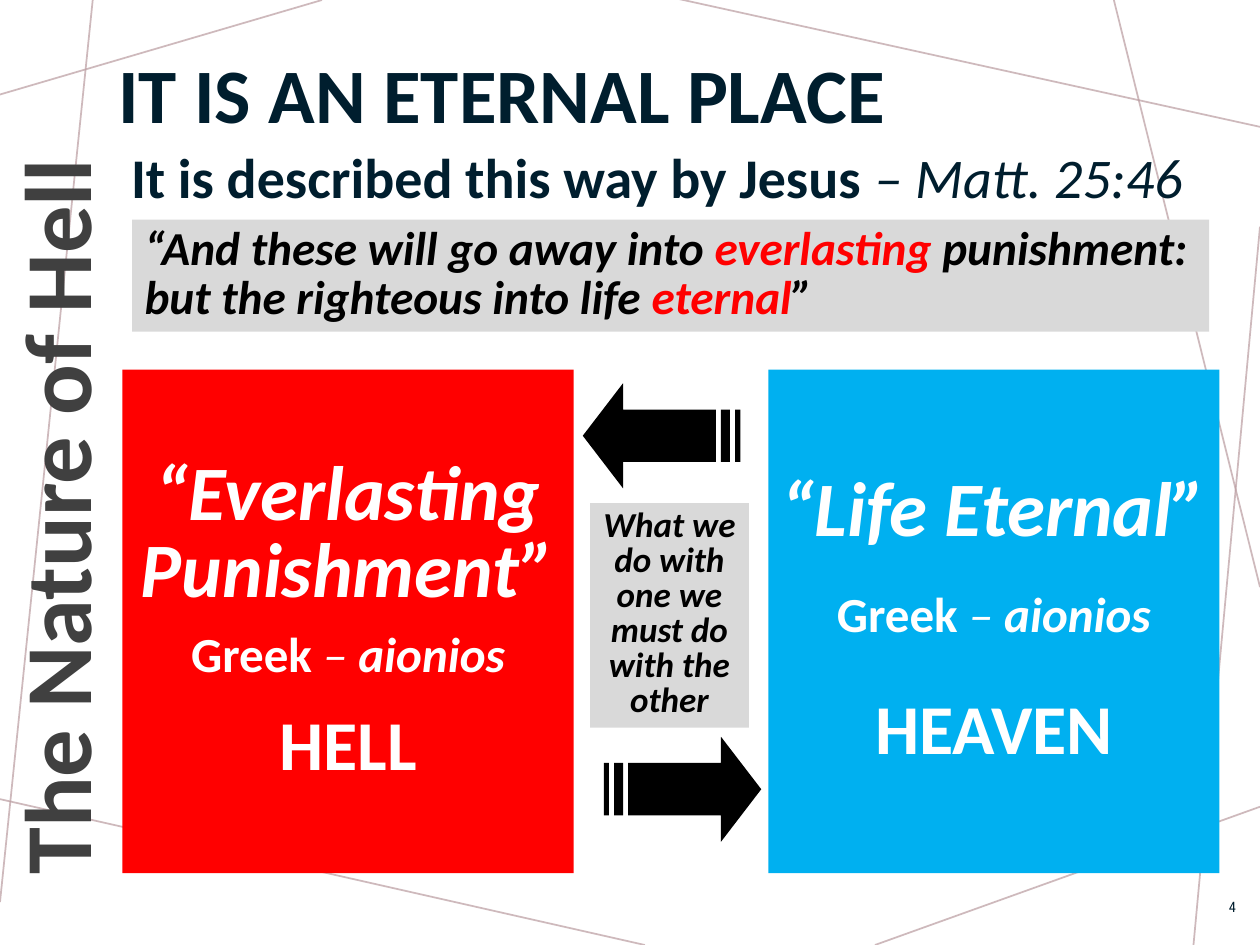
from lxml import etree
from pptx import Presentation
from pptx.dml.color import RGBColor
from pptx.enum import shapes as kinds, text as txt
from pptx.oxml import ns
from pptx.util import Pt

NAVY = RGBColor(0x00, 0x1E, 0x2E)
MAUVE = RGBColor(0xBA, 0x9C, 0xA0)
BLACK = RGBColor(0, 0, 0)
WHITE = RGBColor(0xFF, 0xFF, 0xFF)
RED = RGBColor(0xFF, 0, 0)
BLUE = RGBColor(0x00, 0xB0, 0xF0)
GREY = RGBColor(0xD9, 0xD9, 0xD9)
DARK = RGBColor(0x40, 0x40, 0x40)
MID, LEFT, RIGHT = txt.PP_ALIGN.CENTER, txt.PP_ALIGN.LEFT, txt.PP_ALIGN.RIGHT

# Background lines: start x, y, end x, y
RAYS = [
    (184, 0, 0, 54), (53, 0, 0, 515.5), (368.5, 540, -3, 456),
    (720, 461, 500, 540), (720, 129.5, 682, 540),
    (720, 335.5, 636.5, 0), (720, 72.5, 386, -1),
]

# A paragraph: runs, size, line spacing, space before.
# A run: text, then the font settings that differ from bold upright.
SLANT = {"italic": True}
THIN = {"italic": True, "bold": False}
HOT = {"italic": True, "color": RED}
GREEK = [("Greek ", {}), ("– ", THIN), ("aionios", SLANT)]

TITLE = [([("IT IS AN ETERNAL PLACE", {})], 44, 0.9, 0)]
LEAD = [([("It is described this way by Jesus ", {}),
          ("– Matt. 25:46", THIN)], 32, Pt(32), 0)]
SIDE = [([("The Nature of Hell", {})], 54, 1.0, 0)]
QUOTE = [([("“And these will go away into ", SLANT), ("everlasting", HOT),
           (" punishment: but the righteous into life ", SLANT),
           ("eternal", HOT), ("”", SLANT)], 27, Pt(28), 0)]
HELL = [
    ([("“Everlasting", SLANT)], 44, Pt(44), 0),
    ([("Punishment”", SLANT)], 44, Pt(44), 0),
    (GREEK, 28, Pt(28), 12),
    ([("HELL", {})], 40, Pt(40), 18),
]
HEAVEN = [
    ([("“Life Eternal”", SLANT)], 44, Pt(44), 0),
    (GREEK, 28, Pt(28), 24),
    ([("HEAVEN", {})], 40, Pt(48), 24),
]
NOTE = [([("What we do with one we must do with the other", SLANT)],
         20, Pt(20), 0)]
PAGE = [([("4", {"bold": False})], 8.2, 1.0, 0)]

# Arrow pointing right, as offsets from its centre
ARROW = [
    [(-31, -15), (22.5, -15), (22.5, -30), (45, 0),
     (22.5, 30), (22.5, 15), (-31, 15)],
    [(-39.4, -15), (-33.8, -15), (-33.8, 15), (-39.4, 15)],
    [(-45, -15), (-42.2, -15), (-42.2, 15), (-45, 15)],
]


def write(shape, paras, color, align=LEFT, face="Calibri",
          anchor=txt.MSO_ANCHOR.TOP, wrap=True):
    frame = shape.text_frame
    frame.auto_size = txt.MSO_AUTO_SIZE.NONE
    frame.word_wrap = wrap
    frame.vertical_anchor = anchor
    for i, (runs, size, pitch, before) in enumerate(paras):
        para = frame.add_paragraph() if i else frame.paragraphs[0]
        para.alignment = align
        para.line_spacing = pitch
        para.space_before = Pt(before)
        props = para._p.get_or_add_pPr()
        props.set("marL", "0")
        props.set("indent", "0")
        etree.SubElement(props, ns.qn("a:buNone"))
        para.font.size = Pt(size)
        para.font.name = face
        for words, look in runs:
            run = para.add_run()
            run.text = words
            font = run.font
            font.size, font.name = Pt(size), face
            font.bold = look.get("bold", True)
            font.italic = look.get("italic", False)
            font.color.rgb = look.get("color", color)


def place(shape, box):
    shape.left, shape.top, shape.width, shape.height = map(Pt, box)
    return shape


def paint(shape, fill):
    """Give a flat fill with neither outline nor shadow."""
    shape.shadow.inherit = False
    shape.fill.solid()
    shape.fill.fore_color.rgb = fill
    shape.line.fill.background()
    return shape


def panel(tree, box, fill):
    return paint(tree.add_shape(kinds.MSO_SHAPE.RECTANGLE, *map(Pt, box)), fill)


def label(tree, box):
    return tree.add_textbox(*map(Pt, box))


def ray(tree, ends):
    """Draw a faint line behind everything already on the slide."""
    line = tree.add_connector(kinds.MSO_CONNECTOR.STRAIGHT, *map(Pt, ends))
    line.line.width = Pt(1)
    line.line.color.rgb = MAUVE
    tone = line._element.spPr.find(".//" + ns.qn("a:srgbClr"))
    etree.SubElement(tone, ns.qn("a:alpha"), val="70000")
    etree.SubElement(line._element.spPr, ns.qn("a:effectLst"))
    tree._spTree.remove(line._element)
    tree._spTree.insert(2, line._element)


def arrow(tree, x, y, way):
    """Draw the striped arrow about x, y; way is 1 for right, -1 for left."""
    parts = [[(x + way * dx, y + dy) for dx, dy in part] for part in ARROW]
    pen = tree.build_freeform(*parts[0][0], scale=Pt(1))
    for i, part in enumerate(parts):
        if i:
            pen.move_to(*part[0])
        pen.add_line_segments(part[1:], close=True)
    paint(pen.convert_to_shape(), BLACK)


def main():
    deck = Presentation()
    deck.slide_width, deck.slide_height = Pt(720), Pt(540)
    slide = deck.slides.add_slide(deck.slide_layouts[1])
    tree = slide.shapes
    middle = txt.MSO_ANCHOR.MIDDLE

    for ends in RAYS:
        ray(tree, ends)
    write(place(tree.title, (60.5, 24.5, 667.5, 59)), TITLE, NAVY,
          anchor=txt.MSO_ANCHOR.BOTTOM)
    write(place(slide.placeholders[1], (67.7, 84.2, 652.3, 455.8)), LEAD, NAVY)

    side = label(tree, (-188.6, 259.2, 439.2, 72.7))
    side.rotation = 270
    write(side, SIDE, DARK, MID, wrap=False)

    write(panel(tree, (75.5, 125.5, 615.5, 64), GREY), QUOTE, BLACK)
    for x, fill, paras in ((70, RED, HELL), (439, BLUE, HEAVEN)):
        write(panel(tree, (x, 211.2, 257.8, 287.8), fill), paras, WHITE, MID,
              anchor=middle, wrap=False)
    write(panel(tree, (337.2, 287.5, 90.7, 128.3), GREY), NOTE, BLACK, MID)
    arrow(tree, 378, 249.4, -1)
    arrow(tree, 390, 451.4, 1)
    write(label(tree, (685.4, 504, 28, 28.8)), PAGE, NAVY, RIGHT,
          "Roboto Condensed", middle)

    deck.save("out.pptx")


if __name__ == "__main__":
    main()
